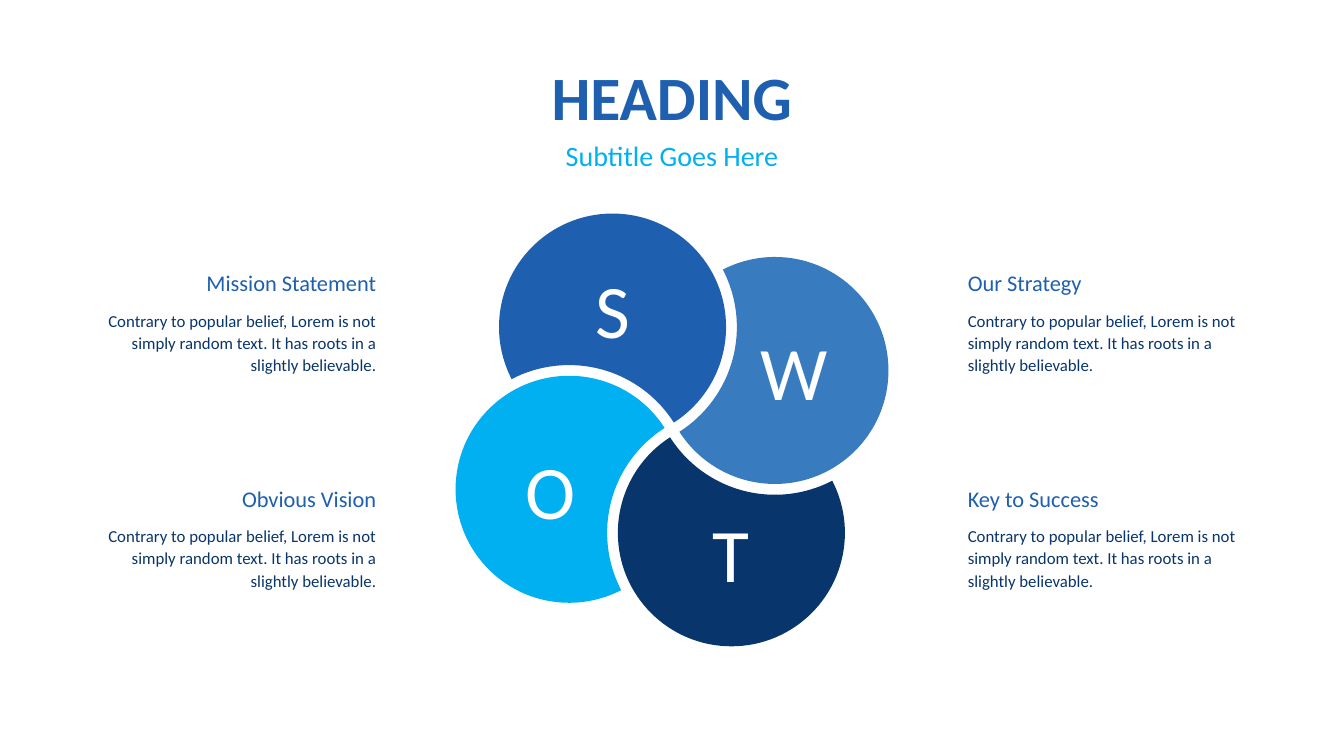
from math import acos, asin, ceil, cos, degrees, radians, sin, sqrt, tan

from lxml import etree
from pptx import Presentation
from pptx.dml.color import RGBColor
from pptx.enum.text import MSO_ANCHOR, MSO_AUTO_SIZE, PP_ALIGN
from pptx.oxml.ns import qn
from pptx.util import Inches, Pt

TOP, MIDDLE, BOTTOM = MSO_ANCHOR.TOP, MSO_ANCHOR.MIDDLE, MSO_ANCHOR.BOTTOM
LEFT, CENTER, RIGHT = PP_ALIGN.LEFT, PP_ALIGN.CENTER, PP_ALIGN.RIGHT
NO_FIT, GROW = MSO_AUTO_SIZE.NONE, MSO_AUTO_SIZE.SHAPE_TO_FIT_TEXT

FONT = "Calibri"
BLUE, MID_BLUE, CYAN, NAVY, WHITE = "1E5FAF", "387CBF", "00B0F0", "08356B", "FFFFFF"
BODY = ("Contrary to popular belief, Lorem is not simply random text. "
        "It has roots in a slightly believable.")

PETALS = [
    ("S", BLUE, 240, "margin_bottom"),
    ("W", MID_BLUE, 330, "margin_left"),
    ("O", CYAN, 150, "margin_right"),
    ("T", NAVY, 60, "margin_top"),
]
NOTES = [
    ("Mission Statement", 1.91, 0.75, 2.62, RIGHT),
    ("Our Strategy", 1.35, 9.5, 2.62, LEFT),
    ("Obvious Vision", 1.55, 0.75, 4.76, RIGHT),
    ("Key to Success", 1.52, 9.5, 4.76, LEFT),
]


def rgb(color):
    return RGBColor.from_string(color)


def set_text(sp, text, size, color, align, anchor,
             bold=False, spacing=1.0, wrap=False, fit=GROW):
    tf = sp.text_frame
    tf.text = text
    tf.word_wrap = wrap
    tf.auto_size = fit
    tf.vertical_anchor = anchor
    p = tf.paragraphs[0]
    p.alignment = align
    p.line_spacing = spacing
    p.space_before = Pt(0)
    font = p.runs[0].font
    font.name, font.size, font.bold = FONT, Pt(size), bold
    font.color.rgb = rgb(color)


def place(sp, x, y, w, h):
    sp.left, sp.top, sp.width, sp.height = map(Inches, (x, y, w, h))


def add_header(s, x, y, w):
    title, subtitle = s.placeholders
    place(title, x, y, w, 0.84)
    set_text(title, "HEADING", 44, BLUE, CENTER, TOP, bold=True)
    place(subtitle, x + 0.14, y + 0.79, w - 0.28, 0.44)
    set_text(subtitle, "Subtitle Goes Here", 20, CYAN, CENTER, TOP)


def polar(center, radius, angle):
    a = radians(angle)
    return center[0] + radius * cos(a), center[1] + radius * sin(a)


def arc_curves(center, radius, angles):
    curves = []
    for start, end in zip(angles, angles[1:]):
        reach = radius * 4 / 3 * tan(radians(end - start) / 4)
        first, last = polar(center, radius, start), polar(center, radius, end)
        curves.append((polar(first, reach, start + 90),
                       polar(last, reach, end - 90), last))
    return curves


def petal_curves(hub, orbit, radius, bite, angle):
    center = polar(hub, orbit, angle)
    neighbour = polar(hub, orbit, angle - 90)
    gap = orbit * sqrt(2)
    facing = angle - 135
    half = acos((gap ** 2 + radius ** 2 - bite ** 2) / (2 * gap * radius))
    bite_half = degrees(asin(radius * sin(half) / bite))
    start, end = facing + degrees(half), facing + 360 - degrees(half)
    extremes = list(range(ceil(start / 90) * 90, ceil(end), 90))
    back = facing + 180
    return (arc_curves(center, radius, [start, *extremes, end])
            + arc_curves(neighbour, bite, [back + bite_half, back, back - bite_half]))


def add_curved_shape(s, curves):
    nodes = [(Inches(x), Inches(y)) for *_, (x, y) in curves]
    builder = s.shapes.build_freeform(*nodes[-1])
    builder.add_line_segments(nodes, close=True)
    sp = builder.convert_to_shape()
    for line, curve in zip(list(sp.element.iter(qn("a:lnTo"))), curves):
        line.tag = qn("a:cubicBezTo")
        line.clear()
        for x, y in curve:
            etree.SubElement(line, qn("a:pt"), x=str(Inches(x) - sp.left),
                             y=str(Inches(y) - sp.top))
    return sp


def add_pinwheel(s, x, y, size):
    hub = x + size / 2, y + size / 2
    orbit, radius, bite = size / 3.64, size / 3.81, size / 3.48
    for letter, color, angle, inset in PETALS:
        sp = add_curved_shape(s, petal_curves(hub, orbit, radius, bite, angle))
        sp.shadow.inherit = False
        sp.fill.solid()
        sp.fill.fore_color.rgb = rgb(color)
        sp.line.fill.background()
        tf = sp.text_frame
        tf.margin_left = tf.margin_right = tf.margin_top = tf.margin_bottom = 0
        setattr(tf, inset, Inches(0.2))
        set_text(sp, letter, 54, WHITE, CENTER, MIDDLE, wrap=True, fit=NO_FIT)


def add_note(s, heading, heading_w, x, y, align):
    w = 3.08
    heading_x = x + w - heading_w if align == RIGHT else x
    sp = s.shapes.add_textbox(Inches(heading_x), Inches(y),
                              Inches(heading_w), Inches(0.37))
    set_text(sp, heading, 16, BLUE, align, BOTTOM)
    sp = s.shapes.add_textbox(Inches(x), Inches(y + 0.39), Inches(w), Inches(0.77))
    set_text(sp, BODY, 12, NAVY, align, TOP, spacing=1.1, wrap=True)


def main():
    prs = Presentation()
    prs.slide_width, prs.slide_height = Inches(13.33), Inches(7.5)
    s = prs.slides.add_slide(prs.slide_layouts[0])
    add_pinwheel(s, 4.52, 2.12, 4.29)
    for note in NOTES:
        add_note(s, *note)
    add_header(s, 5.36, 0.53, 2.61)
    prs.save("out.pptx")


if __name__ == "__main__":
    main()
